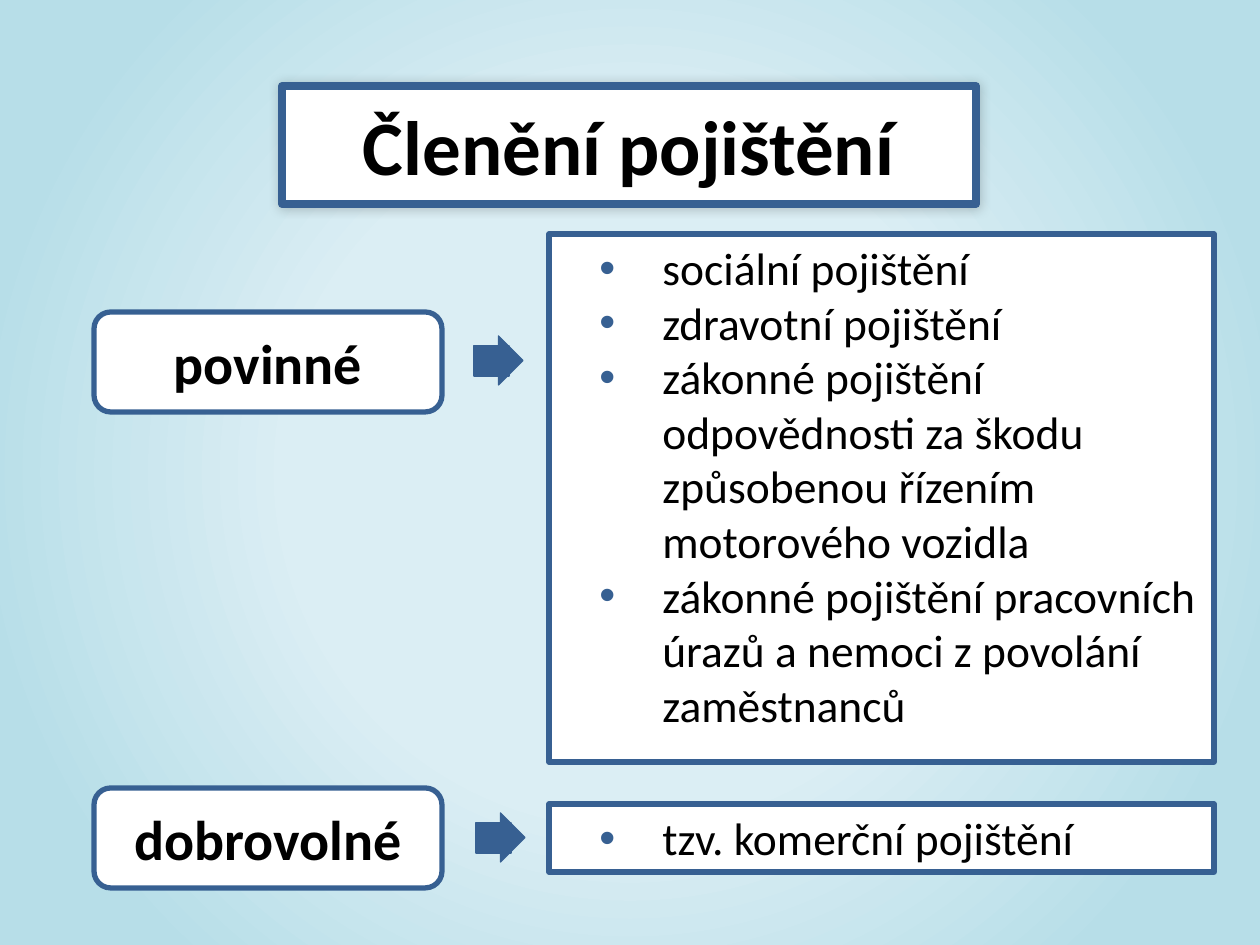
from dataclasses import dataclass

from pptx import Presentation
from pptx.dml.color import RGBColor
from pptx.enum.shapes import MSO_SHAPE
from pptx.enum.text import MSO_ANCHOR, PP_ALIGN
from pptx.oxml import parse_xml
from pptx.util import Pt

RECT = MSO_SHAPE.RECTANGLE
ROUND = MSO_SHAPE.ROUNDED_RECTANGLE
ARROW = MSO_SHAPE.RIGHT_ARROW
MIDDLE, TOP = MSO_ANCHOR.MIDDLE, MSO_ANCHOR.TOP
CENTER, LEFT = PP_ALIGN.CENTER, PP_ALIGN.LEFT

FONT = "Calibri"
BLUE, WHITE, BLACK = "376092", "FFFFFF", "000000"
PALE, TEAL = "DBEEF4", "B7DEE8"
NS = (
    'xmlns:a="http://schemas.openxmlformats.org/drawingml/2006/main" '
    'xmlns:p="http://schemas.openxmlformats.org/presentationml/2006/main"'
)


@dataclass
class Box:
    left: int
    top: int
    width: int
    height: int


@dataclass
class Branch:
    label: str
    box: Box
    arrow: Box
    items: list[str]
    panel: Box


BRANCHES = [
    Branch(
        "povinné",
        Box(94, 312, 348, 100),
        Box(474, 336, 49, 49),
        [
            "sociální pojištění",
            "zdravotní pojištění",
            "zákonné pojištění odpovědnosti za škodu způsobenou řízením motorového vozidla",
            "zákonné pojištění pracovních úrazů a nemoci z povolání zaměstnanců",
        ],
        Box(549, 234, 665, 528),
    ),
    Branch(
        "dobrovolné",
        Box(94, 788, 348, 100),
        Box(476, 813, 49, 49),
        ["tzv. komerční pojištění"],
        Box(549, 804, 665, 68),
    ),
]


def emu(px: int) -> int:
    return round(px * 914400 / 126)


def color(code: str) -> RGBColor:
    return RGBColor.from_string(code)


def draw(shapes, kind, box: Box, fill: str, line: float):
    shape = shapes.add_shape(
        kind, emu(box.left), emu(box.top), emu(box.width), emu(box.height)
    )
    shape.shadow.inherit = False
    shape.fill.solid()
    shape.fill.fore_color.rgb = color(fill)
    shape.line.color.rgb = color(BLUE)
    shape.line.width = Pt(line)
    return shape


def write(shape, lines: list[str], size: int, bold: bool, align, anchor) -> None:
    frame = shape.text_frame
    frame.word_wrap = True
    frame.vertical_anchor = anchor
    frame.text = "\n".join(lines)
    for para in frame.paragraphs:
        para.alignment = align
        for run in para.runs:
            run.font.name = FONT
            run.font.size = Pt(size)
            run.font.bold = bold
            run.font.color.rgb = color(BLACK)


def add_dots(shape) -> None:
    for para in shape.text_frame.paragraphs:
        props = para._p.get_or_add_pPr()
        props.set("marL", str(emu(101)))
        props.set("indent", str(emu(-63)))
        for xml in (
            f'<a:buClr {NS}><a:srgbClr val="{BLUE}"/></a:buClr>',
            f'<a:buFont {NS} typeface="Arial"/>',
            f'<a:buChar {NS} char="•"/>',
        ):
            props.append(parse_xml(xml))


def add_glow(shape) -> None:
    effects = shape._element.spPr.find(
        "{http://schemas.openxmlformats.org/drawingml/2006/main}effectLst"
    )
    effects.append(parse_xml(
        f'<a:outerShdw {NS} blurRad="{Pt(6)}" dist="0" dir="13500000">'
        f'<a:srgbClr val="{BLACK}"><a:alpha val="20000"/></a:srgbClr></a:outerShdw>'
    ))


def paint_back(slide) -> None:
    stops = "".join(
        f'<a:gs pos="{spot * 1000}"><a:srgbClr val="{code}"/></a:gs>'
        for spot, code in ((43, PALE), (84, TEAL), (93, TEAL))
    )
    slide._element.cSld.insert(0, parse_xml(
        f'<p:bg {NS}><p:bgPr><a:gradFill rotWithShape="1"><a:gsLst>{stops}</a:gsLst>'
        '<a:path path="circle"><a:fillToRect l="50000" t="50000" r="50000" b="50000"/>'
        "</a:path></a:gradFill><a:effectLst/></p:bgPr></p:bg>"
    ))


def draw_arrow(slide, box: Box) -> None:
    group = slide.shapes.add_group_shape()
    arrow = draw(group.shapes, ARROW, box, BLUE, 0.75)
    arrow.adjustments[0] = 0.6
    arrow.adjustments[1] = 0.5
    draw(group.shapes, RECT, Box(box.left, box.top + 10, 35, 30), BLUE, 0.75)


def draw_branch(slide, branch: Branch) -> None:
    label = draw(slide.shapes, ROUND, branch.box, WHITE, 3)
    write(label, [branch.label], 32, True, CENTER, MIDDLE)
    draw_arrow(slide, branch.arrow)
    panel = draw(slide.shapes, RECT, branch.panel, WHITE, 3)
    write(panel, branch.items, 26, False, LEFT, TOP)
    add_dots(panel)


def main() -> None:
    deck = Presentation()
    deck.slide_width, deck.slide_height = emu(1260), emu(945)
    slide = deck.slides.add_slide(deck.slide_layouts[6])
    paint_back(slide)
    title = draw(slide.shapes, RECT, Box(282, 86, 694, 118), WHITE, 4.5)
    add_glow(title)
    write(title, ["Členění pojištění"], 44, True, CENTER, MIDDLE)
    for branch in BRANCHES:
        draw_branch(slide, branch)
    deck.save("out.pptx")


if __name__ == "__main__":
    main()
